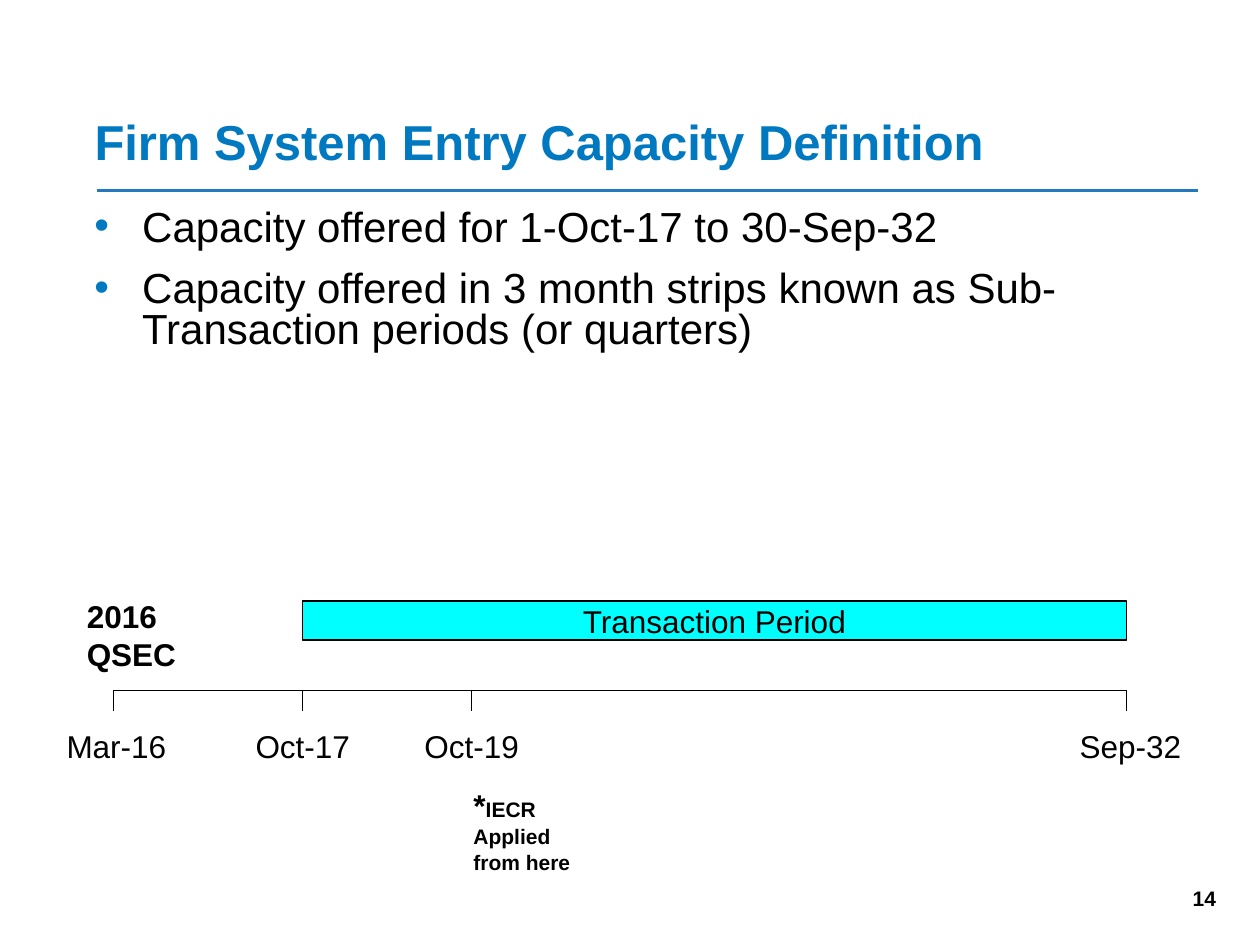
from lxml import etree
from pptx import Presentation
from pptx.dml.color import RGBColor
from pptx.enum.shapes import MSO_CONNECTOR, MSO_SHAPE
from pptx.enum.text import MSO_ANCHOR, MSO_AUTO_SIZE, PP_ALIGN
from pptx.oxml.ns import qn
from pptx.util import Inches, Pt

WIDTH, HEIGHT = Inches(10), Inches(7.5)
FONT = "Arial"
COLOURS = {"heading": "0079C1", "rule": "2478C0", "ink": "000000", "period": "00FFFF"}

# Places and sizes are percentages of the slide's width and height.
AXIS_TOP, TICK_HEIGHT = 73.07, 2.13
LABEL_TOP, LABEL_HEIGHT, LABEL_OFFSET = 76.27, 5.33, 4.7
DATES = [("Mar-16", 9, 10), ("Oct-17", 24, 9.6), ("Oct-19", 37.4, 9.6), ("Sep-32", 89.4, 10.2)]
TICKS = {date: position for date, position, _ in DATES}
BULLET_INDENT = Inches(0.38)


def across(share):
    return round(WIDTH * share / 100)


def down(share):
    return round(HEIGHT * share / 100)


def area(left, top, width, height):
    return across(left), down(top), across(width), down(height)


def colour(name):
    return RGBColor.from_string(COLOURS[name])


def add_run(paragraph, text, size, bold=False, ink="ink"):
    run = paragraph.add_run()
    run.text = text
    run.font.name = FONT
    run.font.size = Pt(size)
    run.font.bold = bold
    run.font.color.rgb = colour(ink)


def fill_text(frame, paragraphs, align=PP_ALIGN.LEFT):
    """Write paragraphs, each a list of add_run arguments, into a text frame."""
    for index, runs in enumerate(paragraphs):
        paragraph = frame.add_paragraph() if index else frame.paragraphs[0]
        paragraph.alignment = align
        for run in runs:
            add_run(paragraph, *run)


def add_text(slide, box, paragraphs, align=PP_ALIGN.LEFT, wrap=True):
    frame = slide.shapes.add_textbox(*area(*box)).text_frame
    frame.word_wrap = wrap
    fill_text(frame, paragraphs, align)
    return frame


def add_line(slide, start, end, name="ink", width=0.75):
    connector = slide.shapes.add_connector(
        MSO_CONNECTOR.STRAIGHT,
        across(start[0]), down(start[1]), across(end[0]), down(end[1]))
    connector.line.color.rgb = colour(name)
    connector.line.width = Pt(width)
    etree.SubElement(connector._element.spPr, qn("a:effectLst"))


def format_title(slide, text):
    title = slide.shapes.title
    title.left, title.top, title.width, title.height = area(6.5, 11.07, 88.5, 7.6)
    frame = title.text_frame
    frame.vertical_anchor = MSO_ANCHOR.BOTTOM
    frame.auto_size = MSO_AUTO_SIZE.SHAPE_TO_FIT_TEXT
    fill_text(frame, [[(text, 28, True, "heading")]])


def add_bullets(slide, box, texts):
    frame = add_text(slide, box, [[(text, 24)] for text in texts])
    for paragraph in frame.paragraphs:
        properties = paragraph._p.get_or_add_pPr()
        properties.set("marL", str(BULLET_INDENT))
        properties.set("indent", str(-BULLET_INDENT))
        bullet_colour = etree.SubElement(properties, qn("a:buClr"))
        etree.SubElement(bullet_colour, qn("a:srgbClr"), val=COLOURS["heading"])
        etree.SubElement(properties, qn("a:buFont"), typeface=FONT)
        etree.SubElement(properties, qn("a:buChar"), char="•")
        paragraph.line_spacing = 0.8
        paragraph.space_after = Pt(12)


def add_period(slide, start, end, text):
    """Draw a bar that spans two positions of the timeline."""
    bar = slide.shapes.add_shape(MSO_SHAPE.RECTANGLE, *area(start, 63.6, end - start, 4.13))
    bar.shadow.inherit = False
    bar.fill.solid()
    bar.fill.fore_color.rgb = colour("period")
    bar.line.color.rgb = colour("ink")
    bar.line.width = Pt(0.75)
    bar.text_frame.word_wrap = False
    bar.text_frame.vertical_anchor = MSO_ANCHOR.MIDDLE
    fill_text(bar.text_frame, [[(text, 18)]], PP_ALIGN.CENTER)


def add_timeline(slide):
    add_line(slide, (TICKS["Mar-16"], AXIS_TOP), (TICKS["Sep-32"], AXIS_TOP))
    for date, position, width in DATES:
        add_line(slide, (position, AXIS_TOP), (position, AXIS_TOP + TICK_HEIGHT))
        add_text(slide, (position - LABEL_OFFSET, LABEL_TOP, width, LABEL_HEIGHT),
                 [[(date, 18)]], wrap=False)


def main():
    presentation = Presentation()
    presentation.slide_width, presentation.slide_height = WIDTH, HEIGHT
    slide = presentation.slides.add_slide(presentation.slide_layouts[5])

    format_title(slide, "Firm System Entry Capacity Definition")
    add_line(slide, (7.7, 20.13), (95.1, 20.13), "rule", 1.5)
    add_bullets(slide, (6.5, 21.6, 88.5, 67.73), [
        "Capacity offered for 1-Oct-17 to 30-Sep-32",
        "Capacity offered in 3 month strips known as Sub-Transaction periods (or quarters)",
    ])

    add_text(slide, (5.9, 62.53, 9.2, 9.47),
             [[("2016", 18, True)], [("QSEC", 18, True)]], wrap=False)
    add_period(slide, TICKS["Oct-17"], TICKS["Sep-32"], "Transaction Period")
    add_timeline(slide)
    add_text(slide, (36.6, 82.53, 13.4, 10.67),
             [[("*", 18, True), ("IECR Applied", 12, True)], [("from here", 12, True)]])
    add_text(slide, (74.2, 93.07, 23.3, 5.33), [[("14", 12, True)]], PP_ALIGN.RIGHT)

    presentation.save("out.pptx")


if __name__ == "__main__":
    main()
